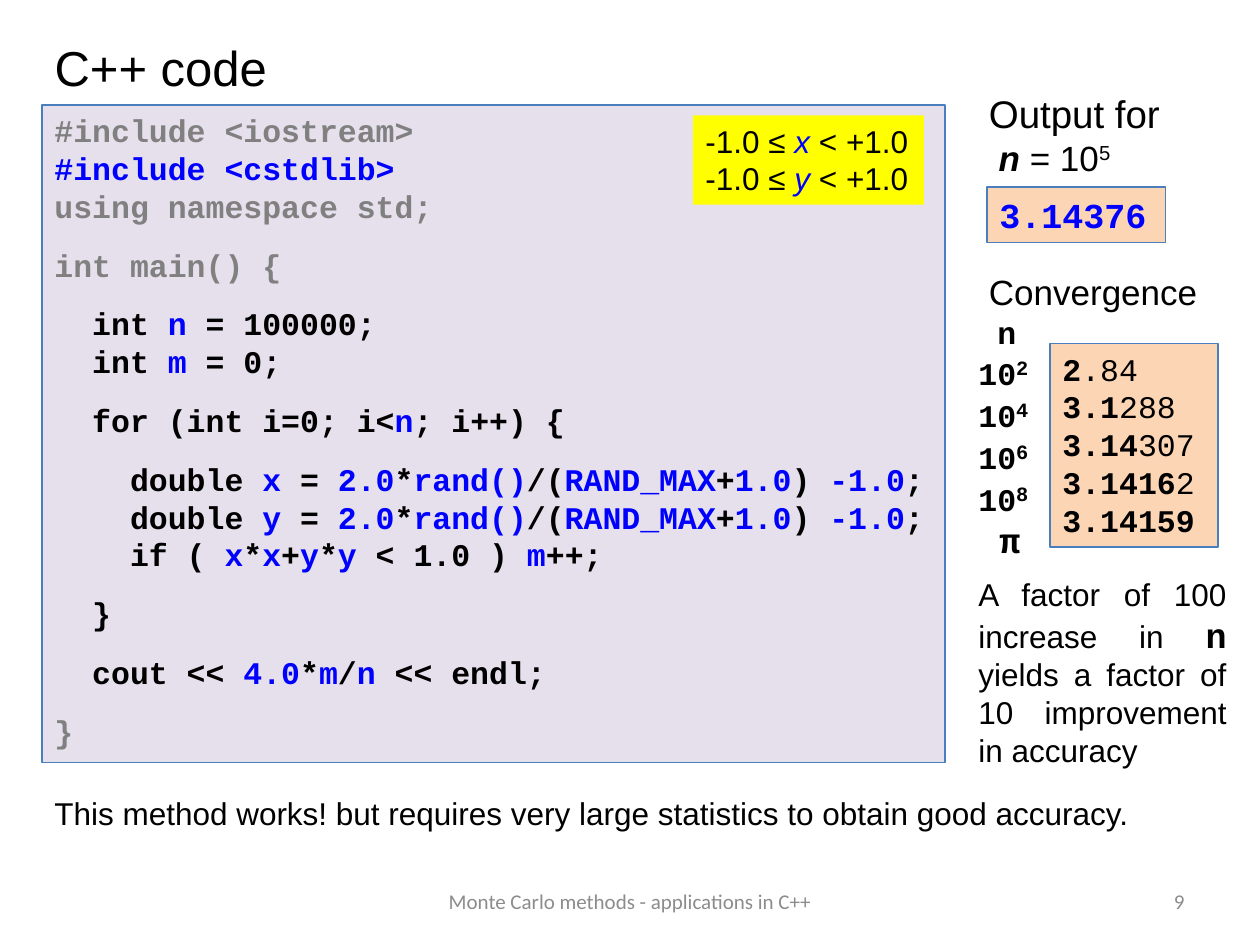
import itertools
import pptx
import pptx.util
import pptx.dml.color
import pptx.enum.shapes
import pptx.enum.text

Pt = pptx.util.Pt
Align = pptx.enum.text.PP_ALIGN
Anchor = pptx.enum.text.MSO_ANCHOR

theme = {
    "ink": "000000", "blue": "0000FF", "dim": "808080", "foot": "8C8C8C",
    "lilac": "E6E0EC", "peach": "FCD5B5", "yellow": "FFFF00", "edge": "4B7EBC",
    "sans": "Arial", "mono": "Courier New", "small": "Calibri",
    "title": 28, "head": 22, "sub": 20, "body": 18, "note": 12, "gap": 12,
}

deck = pptx.Presentation()
deck.slide_width = pptx.util.Inches(10)
deck.slide_height = pptx.util.Inches(7.5)
col = deck.slide_width / 120
row = deck.slide_height / 90
slide = deck.slides.add_slide(deck.slide_layouts[5])


def box(left, top, wide, high, fill=None, edge=None, **frame):
    place = [int(n) for n in (left * col, top * row, wide * col, high * row)]
    if fill:
        shape = slide.shapes.add_shape(pptx.enum.shapes.MSO_SHAPE.RECTANGLE, *place)
        shape.shadow.inherit = False
        shape.fill.solid()
        shape.fill.fore_color.rgb = pptx.dml.color.RGBColor.from_string(theme[fill])
        if edge:
            shape.line.color.rgb = pptx.dml.color.RGBColor.from_string(theme[edge])
            shape.line.width = Pt(0.75)
        else:
            shape.line.fill.background()
    else:
        shape = slide.shapes.add_textbox(*place)
    form = {"word_wrap": True, "vertical_anchor": Anchor.TOP, **frame}
    for key, value in form.items():
        setattr(shape.text_frame, key, value)
    return shape.text_frame


def say(frame, text, looks, indent=0, **para):
    line = frame.paragraphs[0]
    if line.runs:
        line = frame.add_paragraph()
    for key, value in {"alignment": Align.LEFT, **para}.items():
        setattr(line, key, value)
    if indent:
        line._p.get_or_add_pPr().set("marL", str(Pt(indent)))
    for part, look in zip(text.split("|"), itertools.cycle(looks)):
        run = line.add_run()
        run.text = part
        form = {"bold": False, "italic": False, **look}
        run.font.color.rgb = pptx.dml.color.RGBColor.from_string(theme[form.pop("ink", "ink")])
        if form.pop("sup", False):
            run._r.get_or_add_rPr().set("baseline", "30000")
        for key, value in form.items():
            setattr(run.font, key, value)


sans = {"name": theme["sans"], "size": Pt(theme["body"])}
mono = {"name": theme["mono"], "size": Pt(theme["body"])}
bold = {**mono, "bold": True}
blue = {**bold, "ink": "blue"}
dim = {**bold, "ink": "dim"}
large = {**sans, "size": Pt(theme["sub"])}
power = {**bold, "size": Pt(theme["sub"]), "sup": True}

title = slide.shapes.title
title.left, title.top = int(4 * col), int(3 * row)
title.width, title.height = int(23 * col), int(6.9 * row)
for key, value in {"vertical_anchor": Anchor.TOP, "word_wrap": True,
                   "auto_size": pptx.enum.text.MSO_AUTO_SIZE.NONE}.items():
    setattr(title.text_frame, key, value)
say(title.text_frame, "C++ code", [{**sans, "size": Pt(theme["title"])}])

foot = {"name": theme["small"], "size": Pt(theme["note"]), "ink": "foot"}
for left, wide, text, align in [
    (41, 38, "Monte Carlo methods - applications in C++", Align.CENTER),
    (86, 28, "9", Align.RIGHT),
]:
    frame = box(left, 83.4, wide, 4.8, vertical_anchor=Anchor.MIDDLE)
    say(frame, text, [foot], alignment=align)

draw = "double |{}| = |2.0|*|rand()|/(|RAND_MAX|+|1.0|)| -1.0|;"
code = [
    (0, [dim], ["#include <iostream>"]),
    (0, [blue], ["#include <cstdlib>"]),
    (0, [dim], ["using namespace std;"]),
    (0, [dim], ["int main() {"]),
    (1, [bold, blue], ["int |n| = 100000;", "int |m| = 0;"]),
    (1, [bold, blue], ["for (int i=0; i<|n|; i++) {"]),
    (2, [bold, blue], [draw.format("x"), draw.format("y"),
                       "if ( |x|*|x|+|y|*|y| < 1.0 ) |m|++;"]),
    (1, [bold], ["}"]),
    (1, [bold, blue], ["cout << |4.0|*|m|/|n| << endl;"]),
    (0, [dim], ["}"]),
]
frame = box(4, 10, 86, 62.6, "lilac", "edge")
for block, (depth, looks, lines) in enumerate(code):
    for order, text in enumerate(lines):
        gap = theme["gap"] if block > 2 and order == 0 else 0
        say(frame, text, looks, indent=21.6 * depth, space_before=Pt(gap))

frame = box(94, 17.8, 17, 5.3, "peach", "edge")
say(frame, "3.14376", [{**blue, "size": Pt(theme["sub"])}])

frame = box(100, 32.7, 16, 19.4, "peach", "edge")
for text in ["2|.84", "3.1|288", "3.14|307", "3.1416|2", "3.14159"]:
    say(frame, text, [bold, mono])

frame = box(92, 29.2, 8, 23.4)
say(frame, " n", [bold])
for text in "2468":
    say(frame, "10|" + text, [bold, power])
say(frame, " π", [{**bold, "size": Pt(theme["sub"])}])

say(box(93, 25.2, 24, 5.3), "Convergence", [large])

frame = box(92, 54.2, 26, 19.8)
say(frame, "A factor of 100 increase in |n| yields a factor of 10 improvement in accuracy",
    [sans, {**bold, "size": Pt(theme["sub"])}], alignment=Align.JUSTIFY)

frame = box(93, 8, 20, 9.7)
say(frame, "Output for", [{**sans, "size": Pt(theme["head"])}])
say(frame, " |n| = 10|5", [large, {**large, "bold": True, "italic": True},
                           large, {**large, "sup": True}])

say(box(4, 75, 109, 4.8),
    "This method works! but requires very large statistics to obtain good accuracy.", [sans])

frame = box(66, 11, 22, 8.5, "yellow", word_wrap=False)
for axis in "xy":
    say(frame, f"-1.0 ≤ |{axis}| < +1.0", [sans, {**sans, "ink": "blue", "italic": True}])

deck.save("out.pptx")
